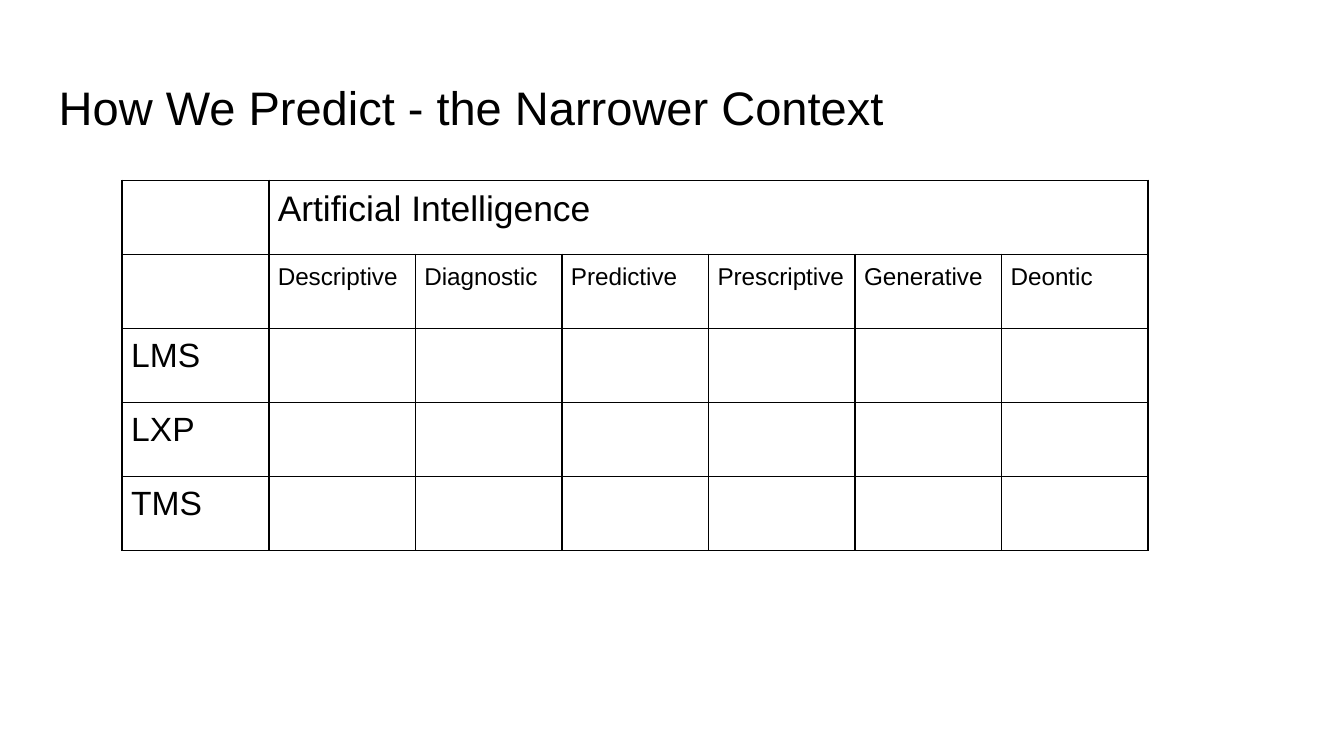
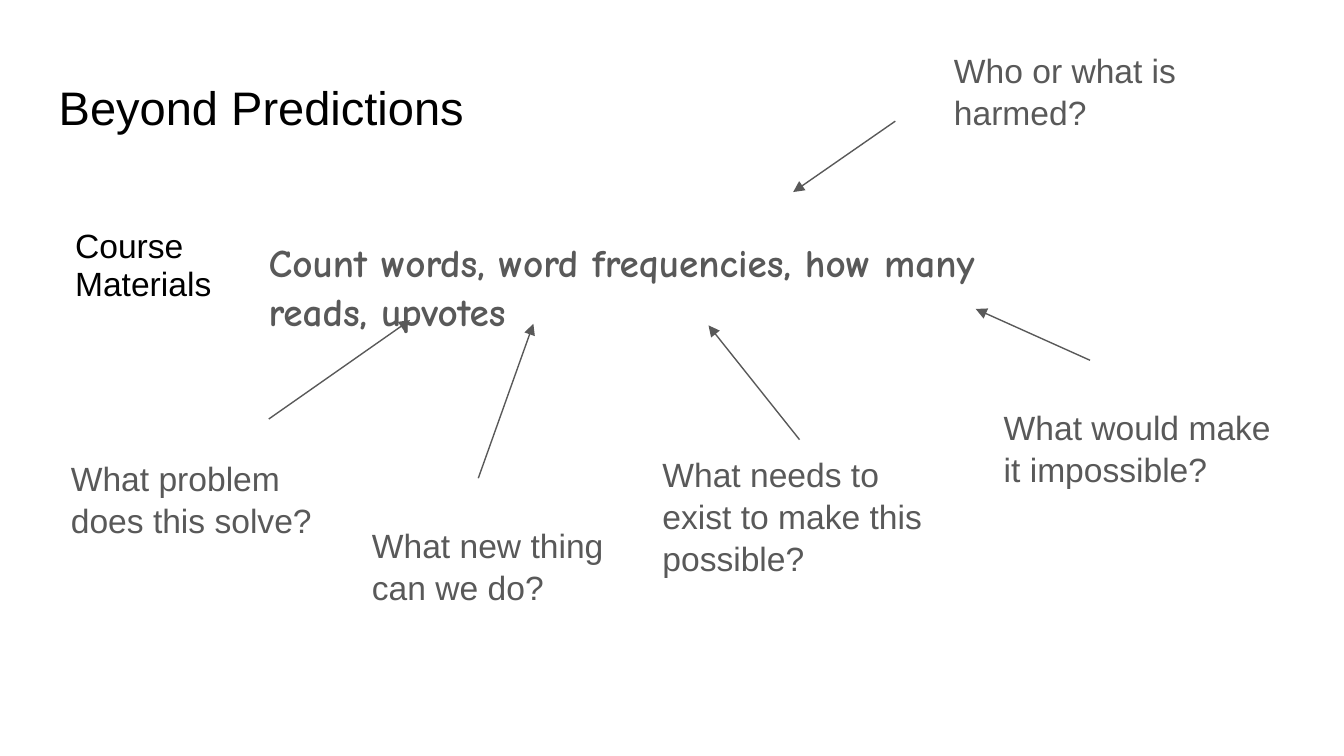
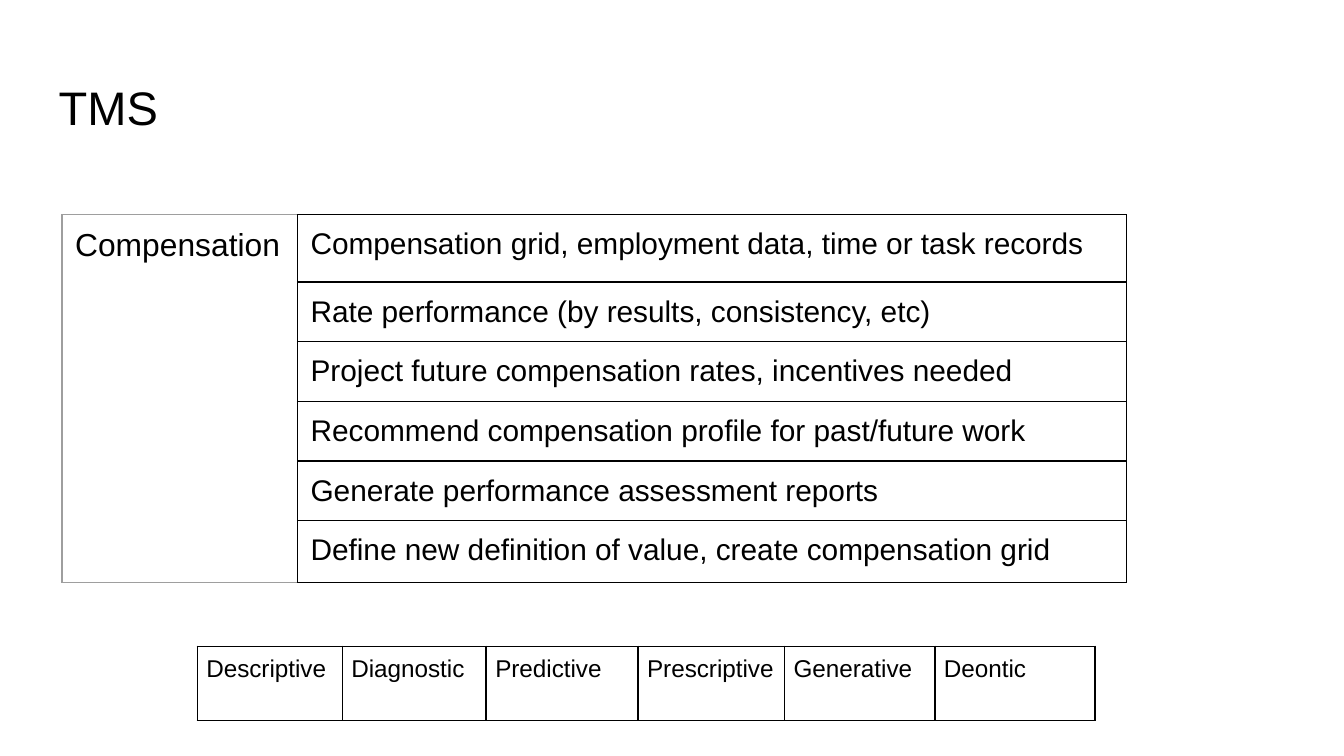
from lxml.etree import SubElement
from pptx import Presentation
from pptx.dml.color import RGBColor
from pptx.enum.shapes import MSO_CONNECTOR
from pptx.enum.text import MSO_ANCHOR, PP_ALIGN
from pptx.oxml import parse_xml
from pptx.oxml.ns import nsdecls, qn
from pptx.util import Cm, Pt

BLACK = RGBColor(0x00, 0x00, 0x00)
WHITE = RGBColor(0xFF, 0xFF, 0xFF)
GRAY = RGBColor(0x59, 0x59, 0x59)
PALE_GRAY = RGBColor(0x9E, 0x9E, 0x9E)
BODY_FONT = "Arial"
HAND_FONT = "Comic Neue"

TITLE_BOX = (0.86, 1.24, 23.67, 1.6)
WIDE_MARGIN = 0.25
NARROW_MARGIN = 0.17

AI_KINDS = ["Descriptive", "Diagnostic", "Predictive",
            "Prescriptive", "Generative", "Deontic"]
SYSTEMS = ["LMS", "LXP", "TMS"]

MATERIALS = "Course Materials"
MATERIAL_USE = "Count words, word frequencies, how many reads, upvotes"
MATERIAL_USE_BOX = (4.83, 4.22, 14.86, 1.7)
QUESTION_SIZE = (5.69, 2.74)
# question, its left and top, arrow start, arrow end (cm)
QUESTIONS = [
    ("What problem does this solve?", (1.09, 8.38), (5.08, 7.92), (7.75, 6.05)),
    ("What new thing can we do?", (6.78, 9.65), (9.04, 9.04), (10.08, 6.12)),
    ("What needs to exist to make this possible?", (12.27, 8.31), (15.11, 8.31), (13.39, 6.15)),
    ("What would make it impossible?", (18.72, 7.42), (20.6, 6.81), (18.44, 5.84)),
    ("Who or what is harmed?", (17.78, 0.66), (16.92, 2.29), (14.99, 3.63)),
]

TMS_TOPIC = "Compensation"
TMS_USES = [
    "Compensation grid, employment data, time or task records",
    "Rate performance (by results, consistency, etc)",
    "Project future compensation rates, incentives needed",
    "Recommend compensation profile for past/future work",
    "Generate performance assessment reports",
    "Define new definition of value, create compensation grid",
]
TOPIC_TABLE_AT = (1.17, 4.06)
USE_ROW = 1.1


def style_text(frame, size, color=BLACK, font=BODY_FONT, bold=False):
    for paragraph in frame.paragraphs:
        paragraph.alignment = PP_ALIGN.LEFT
        for run in paragraph.runs:
            run.font.size = Pt(size)
            run.font.name = font
            run.font.bold = bold
            run.font.color.rgb = color


def set_margins(frame, margin):
    frame.margin_left = frame.margin_right = Cm(margin)
    frame.margin_top = frame.margin_bottom = Cm(margin)


def add_titled_slide(prs, heading):
    slide = prs.slides.add_slide(prs.slide_layouts[5])
    title = slide.shapes.title
    title.left, title.top, title.width, title.height = map(Cm, TITLE_BOX)
    frame = title.text_frame
    frame.text = heading
    frame.vertical_anchor = MSO_ANCHOR.TOP
    set_margins(frame, WIDE_MARGIN)
    style_text(frame, 25.2)
    return slide


def add_text(slide, words, box, size, **style):
    frame = slide.shapes.add_textbox(*map(Cm, box)).text_frame
    frame.word_wrap = True
    frame.text = words
    frame.paragraphs[0].line_spacing = 1.04
    set_margins(frame, WIDE_MARGIN)
    style_text(frame, size, GRAY, **style)


def add_arrow(slide, start, end):
    arrow = slide.shapes.add_connector(MSO_CONNECTOR.STRAIGHT, *map(Cm, start + end))
    arrow.line.color.rgb = GRAY
    arrow.line.width = Pt(0.75)
    SubElement(arrow.line._get_or_add_ln(), qn("a:tailEnd"), type="triangle")
    SubElement(arrow._element.spPr, qn("a:effectLst"))


def set_borders(cell, width, colors):
    """Draw the left, right, top and bottom edges in the four colors."""
    properties = cell._tc.get_or_add_tcPr()
    for place, (edge, color) in enumerate(zip("LRTB", colors)):
        properties.insert(place, parse_xml(
            f'<a:ln{edge} {nsdecls("a")} w="{Pt(width)}"><a:solidFill>'
            f'<a:srgbClr val="{color}"/></a:solidFill></a:ln{edge}>'))


def add_grid(slide, at, widths, heights, cells, margin, line, line_width,
             merge=None, first_column=None):
    """Add a table; cells maps (row, column) to (words, size).

    merge gives the two corners of a merged block, first_column the four
    edge colors of the cells in the first column.
    """
    frame = slide.shapes.add_table(len(heights), len(widths), *map(
        Cm, (*at, sum(widths), sum(heights))))
    table = frame.table
    table.first_row = table.horz_banding = False
    for column, width in zip(table.columns, widths):
        column.width = Cm(width)
    for r, height in enumerate(heights):
        table.rows[r].height = Cm(height)
        for c in range(len(widths)):
            cell = table.cell(r, c)
            cell.fill.background()
            edges = first_column if c == 0 and first_column else [line] * 4
            set_borders(cell, line_width, edges)
            words, size = cells.get((r, c), ("", 0))
            set_margins(cell, margin if words else NARROW_MARGIN)
            if words:
                cell.text_frame.text = words
                style_text(cell.text_frame, size)
    if merge:
        table.cell(*merge[0]).merge(table.cell(*merge[1]))


def add_context_slide(prs):
    slide = add_titled_slide(prs, "How We Predict - the Narrower Context")
    cells = {(0, 1): ("Artificial Intelligence", 19)}
    cells |= {(1, c): (kind, 13) for c, kind in enumerate(AI_KINDS, 1)}
    cells |= {(r, 0): (system, 18) for r, system in enumerate(SYSTEMS, 2)}
    add_grid(slide, (2.31, 3.41), [2.77] * 7, [1.4] * 5, cells,
             NARROW_MARGIN, BLACK, 1, merge=((0, 1), (0, 6)))


def add_questions_slide(prs):
    slide = add_titled_slide(prs, "Beyond Predictions")
    add_grid(slide, TOPIC_TABLE_AT, [3.28, 16.84], [1.47] + [USE_ROW] * 5,
             {(0, 0): (MATERIALS, 18)}, WIDE_MARGIN, WHITE, 0.75,
             merge=((0, 0), (5, 0)))
    add_text(slide, MATERIAL_USE, MATERIAL_USE_BOX, 21, font=HAND_FONT, bold=True)
    for question, at, _, _ in QUESTIONS:
        add_text(slide, question, at + QUESTION_SIZE, 18)
    for _, _, start, end in QUESTIONS:
        add_arrow(slide, start, end)


def add_tms_slide(prs):
    slide = add_titled_slide(prs, "TMS")
    cells = {(0, 0): (TMS_TOPIC, 17)}
    cells |= {(r, 1): (use, 16) for r, use in enumerate(TMS_USES)}
    add_grid(slide, TOPIC_TABLE_AT, [4.45, 15.67], [1.27] + [USE_ROW] * 5,
             cells, WIDE_MARGIN, BLACK, 0.75, merge=((0, 0), (5, 0)),
             first_column=[PALE_GRAY, BLACK, PALE_GRAY, PALE_GRAY])
    add_grid(slide, (3.73, 12.22), [2.74, 2.72, 2.87, 2.77, 2.84, 3.02], [1.4],
             {(0, c): (kind, 13) for c, kind in enumerate(AI_KINDS)},
             NARROW_MARGIN, BLACK, 1)


def main():
    prs = Presentation()
    prs.slide_width, prs.slide_height = Cm(25.4), Cm(14.29)
    add_context_slide(prs)
    add_questions_slide(prs)
    add_tms_slide(prs)
    prs.save("out.pptx")


if __name__ == "__main__":
    main()
